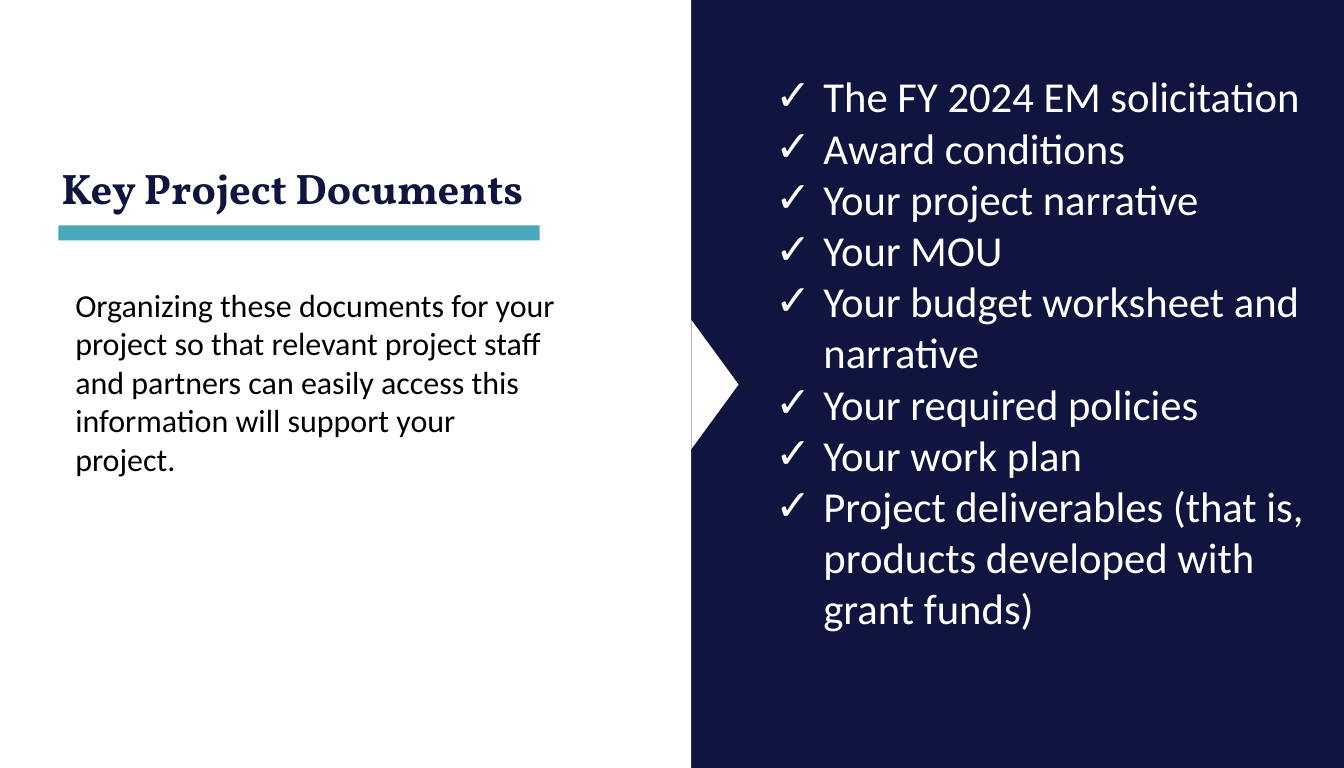
from lxml.etree import SubElement
from pptx import Presentation
from pptx.dml.color import RGBColor
from pptx.enum.shapes import MSO_SHAPE
from pptx.enum.text import MSO_ANCHOR, MSO_AUTO_SIZE
from pptx.oxml.ns import qn
from pptx.util import Pt

COLORS = {
    "navy": "0F153E",
    "teal": "4AA8BB",
    "white": "FFFFFF",
    "black": "000000",
}

DOCUMENTS = [
    "The FY 2024 EM solicitation",
    "Award conditions",
    "Your project narrative",
    "Your MOU",
    "Your budget worksheet and narrative",
    "Your required policies",
    "Your work plan",
    "Project deliverables (that is, products developed with grant funds)",
]
ADVICE = (
    "Organizing these documents for your project so that relevant project "
    "staff and partners can easily access this information will support "
    "your project."
)


def add_block(page, kind, left, top, width, height, color, rotation=0):
    """Add a plain filled shape without line or shadow."""
    block = page.shapes.add_shape(kind, Pt(left), Pt(top), Pt(width), Pt(height))
    block.rotation = rotation
    block.shadow.inherit = False
    block.fill.solid()
    block.fill.fore_color.rgb = RGBColor.from_string(COLORS[color])
    block.line.fill.background()


def set_check_bullet(para, indent):
    """Give a paragraph a hanging check mark."""
    properties = para._p.get_or_add_pPr()
    properties.set("marL", str(Pt(indent)))
    properties.set("indent", str(-Pt(indent)))
    SubElement(properties, qn("a:buFont"), typeface="Calibri")
    SubElement(properties, qn("a:buChar"), char="✓")


def set_outline(span, color, width):
    """Draw a thin line around the letters of a run."""
    properties = span.font._element if hasattr(span.font, "_element") else span._r.get_or_add_rPr()
    line = SubElement(properties, qn("a:ln"), w=str(Pt(width)))
    fill = SubElement(line, qn("a:solidFill"))
    SubElement(fill, qn("a:srgbClr"), val=COLORS[color])
    properties.insert(0, line)


def add_text(page, text, left, top, width, height, *, size, color,
             font="Calibri", bold=False, anchor=MSO_ANCHOR.TOP, fit=False,
             spacing=None, bullet_indent=0, outline=0):
    """Add a text box; a list of strings gives one paragraph each."""
    box = page.shapes.add_textbox(Pt(left), Pt(top), Pt(width), Pt(height))
    frame = box.text_frame
    frame.word_wrap = True
    frame.vertical_anchor = anchor
    frame.auto_size = MSO_AUTO_SIZE.SHAPE_TO_FIT_TEXT if fit else MSO_AUTO_SIZE.NONE
    lines = [text] if isinstance(text, str) else text
    for number, line in enumerate(lines):
        para = frame.add_paragraph() if number else frame.paragraphs[0]
        if spacing:
            para.line_spacing = spacing
        if bullet_indent:
            set_check_bullet(para, bullet_indent)
        span = para.add_run()
        span.text = line
        span.font.name = font
        span.font.size = Pt(size)
        span.font.bold = bold
        span.font.color.rgb = RGBColor.from_string(COLORS[color])
        if outline:
            set_outline(span, color, outline)


def main():
    deck = Presentation()
    deck.slide_width, deck.slide_height = Pt(756), Pt(432)
    page = deck.slides.add_slide(deck.slide_layouts[6])

    # Two halves of the page
    add_block(page, MSO_SHAPE.RECTANGLE, 384, 0, 388.8, 432, "navy")
    add_block(page, MSO_SHAPE.RECTANGLE, 0, 0, 388.8, 432, "white")

    # Title with its underline
    add_text(page, "Key Project Documents", 27.4, 25.2, 330.5, 98.6,
             size=24, color="navy", font="Vollkorn", bold=True,
             anchor=MSO_ANCHOR.BOTTOM, spacing=0.9, outline=0.25)
    add_block(page, MSO_SHAPE.RECTANGLE, 32.9, 126.7, 270.7, 8.6, "teal")

    # Pointer into the dark half
    add_block(page, MSO_SHAPE.ISOSCELES_TRIANGLE, 365.8, 203, 72.7, 26.6,
              "white", rotation=90)

    # Checklist and advice
    add_text(page, DOCUMENTS, 429.1, 36, 316.8, 356.4,
             size=24, color="white", fit=True, bullet_indent=27)
    add_text(page, ADVICE, 35.3, 157, 285.8, 116.6,
             size=18, color="black", fit=True)

    deck.save("out.pptx")


if __name__ == "__main__":
    main()
